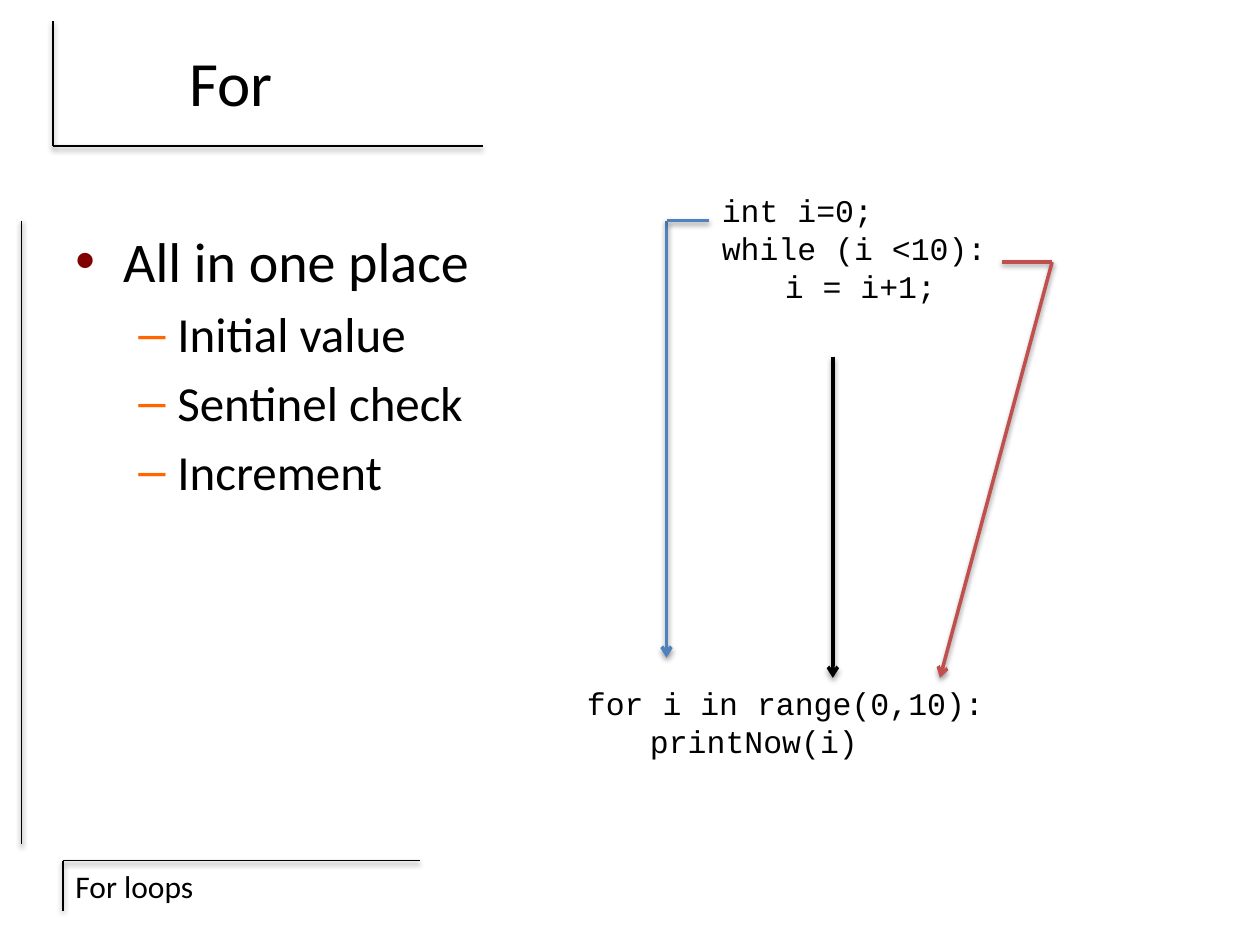
import pptx
import pptx.dml.color
import pptx.enum.shapes
import pptx.enum.text
import pptx.oxml
import pptx.oxml.ns
import pptx.util

Inches = pptx.util.Inches
Pt = pptx.util.Pt

COLORS = {
    "text": "000000",
    "bullet": "800000",
    "dash": "FF6600",
    "initial": "4F81BD",
    "sentinel": "C0504D",
}
BODY_FONT = "Calibri"
CODE_FONT = "Courier New"
NAMESPACE = pptx.oxml.ns.nsdecls("a")
SHADOW = (
    f'<a:effectLst {NAMESPACE}><a:outerShdw blurRad="{Pt(3.1)}" dist="{Pt(1.6)}" '
    'dir="5400000" rotWithShape="0"><a:srgbClr val="000000"><a:alpha val="38000"/>'
    "</a:srgbClr></a:outerShdw></a:effectLst>"
)


def rgb(name):
    return pptx.dml.color.RGBColor.from_string(COLORS[name])


def add_line(slide, start, end, color="text", width=1, arrow=False):
    ends = [Inches(value) for value in (*start, *end)]
    line = slide.shapes.add_connector(pptx.enum.shapes.MSO_CONNECTOR.STRAIGHT, *ends)
    line.line.color.rgb = rgb(color)
    line.line.width = Pt(width)
    if arrow:
        line.line._get_or_add_ln().append(
            pptx.oxml.parse_xml(f'<a:tailEnd {NAMESPACE} type="arrow"/>'))
    line._element.spPr.append(pptx.oxml.parse_xml(SHADOW))


def add_run(paragraph, text, size, font):
    run = paragraph.add_run()
    run.text = text
    run.font.size = Pt(size)
    run.font.name = font
    run.font.color.rgb = rgb("text")


def add_text_box(slide, box, wrap=True):
    frame = slide.shapes.add_textbox(*map(Inches, box)).text_frame
    frame.word_wrap = wrap
    return frame


def next_paragraph(frame, index):
    return frame.add_paragraph() if index else frame.paragraphs[0]


def set_bullet(paragraph, character, color, margin, indent):
    properties = paragraph._p.get_or_add_pPr()
    properties.set("marL", str(Inches(margin)))
    properties.set("indent", str(Inches(-indent)))
    for xml in (
        f'<a:buClr {NAMESPACE}><a:srgbClr val="{COLORS[color]}"/></a:buClr>',
        f'<a:buFont {NAMESPACE} typeface="Arial"/>',
        f'<a:buChar {NAMESPACE} char="{character}"/>',
    ):
        properties.append(pptx.oxml.parse_xml(xml))


def add_title(slide, box, text):
    left, top, width, height = box
    title = slide.shapes.title
    title.left, title.top, title.width, title.height = map(Inches, box)
    frame = title.text_frame
    frame.vertical_anchor = pptx.enum.text.MSO_ANCHOR.MIDDLE
    paragraph = frame.paragraphs[0]
    paragraph.alignment = pptx.enum.text.PP_ALIGN.CENTER
    add_run(paragraph, text, 36, BODY_FONT)
    corner = (left - 0.08, top + height + 0.04)
    add_line(slide, corner, (left + width + 0.66, corner[1]))
    add_line(slide, (corner[0], top), corner)


def add_footer(slide, box, text):
    left, top, width, height = box
    add_line(slide, (left + 2.83, top), (left, top))
    add_line(slide, (left, top), (left, top + height))
    add_run(add_text_box(slide, box).paragraphs[0], text, 18, BODY_FONT)


def add_bullets(slide, box, items):
    left, top, width, height = box
    add_line(slide, (left - 0.33, top), (left - 0.33, top + height))
    frame = add_text_box(slide, box)
    for index, (level, text) in enumerate(items):
        paragraph = next_paragraph(frame, index)
        paragraph.level = level
        size = 28 if level else 32
        paragraph.space_before = Pt(size * 0.2)
        if level:
            set_bullet(paragraph, "–", "dash", 0.81, 0.31)
        else:
            set_bullet(paragraph, "•", "bullet", 0.38, 0.38)
        add_run(paragraph, text, size, BODY_FONT)


def add_code(slide, box, lines):
    frame = add_text_box(slide, box, wrap=False)
    for index, text in enumerate(lines):
        add_run(next_paragraph(frame, index), text, 18, CODE_FONT)


def add_mapping(slide, while_box, for_box):
    left, top, width, height = while_box
    target = for_box[1]
    initial = (left - 0.34, top + 0.28)
    sentinel = (left + width + 0.4, top + 0.61)
    middle = left + 0.98
    add_line(slide, initial, (initial[0], target - 0.16), "initial", 2, True)
    add_line(slide, (left, initial[1]), initial, "initial", 2)
    add_line(slide, sentinel, (left + width, sentinel[1]), "sentinel", 2)
    add_line(slide, sentinel, (7.46, target), "sentinel", 2, True)
    add_line(slide, (middle, top + height + 0.05), (middle, target), "text", 2, True)


def main():
    presentation = pptx.Presentation()
    presentation.slide_width = Inches(10)
    presentation.slide_height = Inches(7.5)
    slide = presentation.slides.add_slide(presentation.slide_layouts[5])

    add_footer(slide, (0.5, 6.83, 2.42, 0.4), "For loops")
    add_title(slide, (0.5, 0.17, 2.67, 0.95), "For")
    add_bullets(slide, (0.5, 1.75, 9, 4.95), [
        (0, "All in one place"),
        (1, "Initial value"),
        (1, "Sentinel check"),
        (1, "Increment"),
    ])
    for_box = (4.56, 5.38, 3.38, 0.71)
    while_box = (5.63, 1.47, 2.32, 1.31)
    add_code(slide, for_box, ["for i in range(0,10):", "\tprintNow(i)"])
    add_code(slide, while_box, ["int i=0;", "while (i <10):", "\ti = i+1;"])
    add_mapping(slide, while_box, for_box)

    presentation.save("out.pptx")


if __name__ == "__main__":
    main()
